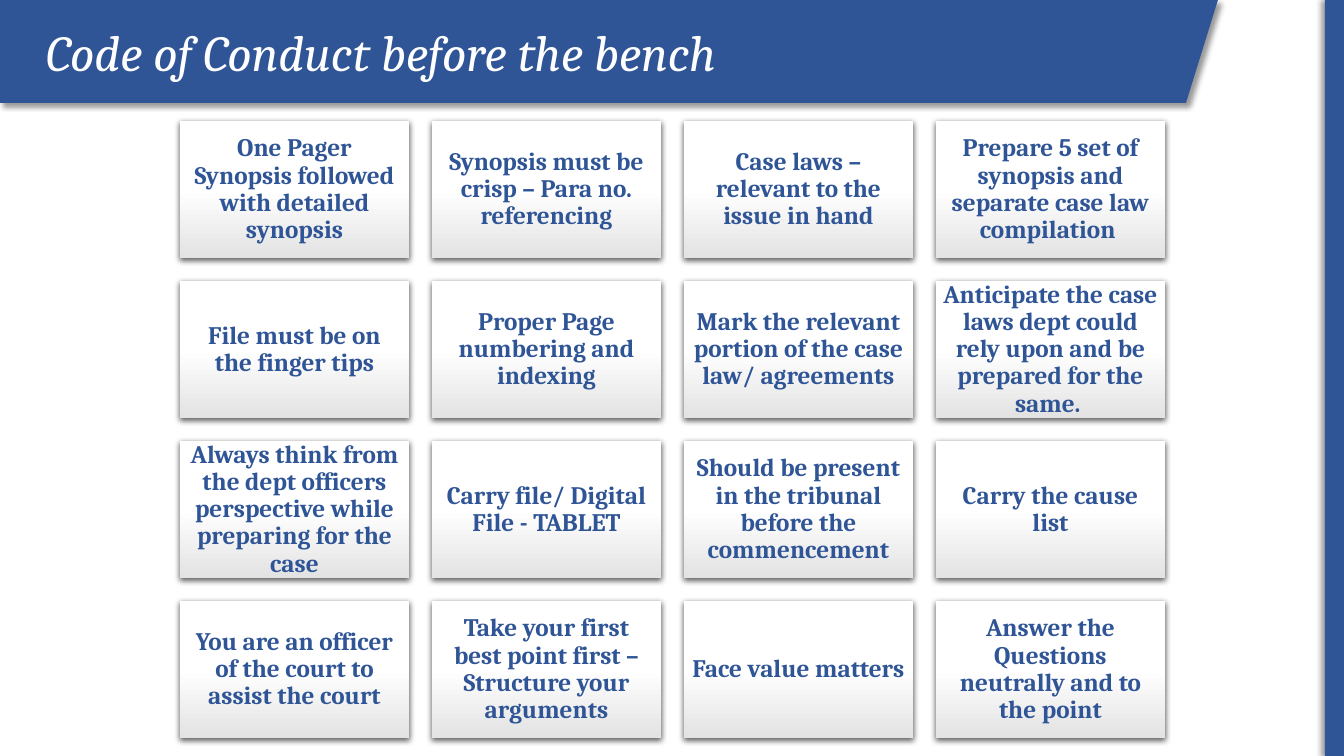
from pptx import Presentation
from pptx.dml.color import RGBColor
from pptx.enum.shapes import MSO_SHAPE as SHAPE
from pptx.enum.text import MSO_ANCHOR as ANCHOR, PP_ALIGN as ALIGN
from pptx.util import Pt
from lxml.etree import SubElement
from pptx.oxml.ns import qn

PX = 9144000 / 1008
BLUE, WHITE, GREY = "2F5597", "FFFFFF", "E3E3E3"
CARDS = [
    "One Pager Synopsis followed with detailed synopsis",
    "Synopsis must be crisp – Para no. referencing",
    "Case laws – relevant to the issue in hand",
    "Prepare 5 set of synopsis and separate case law compilation ",
    "File must be on the finger tips",
    "Proper Page numbering and indexing",
    "Mark the relevant portion of the case law/ agreements",
    "Anticipate the case laws dept could rely upon and be prepared for the same. ",
    "Always think from the dept officers perspective while preparing for the case",
    "Carry file/ Digital File - TABLET",
    "Should be present in the tribunal before the commencement",
    "Carry the cause list",
    "You are an officer of the court to assist the court",
    "Take your first best point first – Structure your arguments",
    "Face value matters",
    "Answer the Questions neutrally and to the point",
]


def box(*sizes):
    """Turn px lengths into EMU."""
    return [round(size * PX) for size in sizes]


def shade(shape, blur, dist, angle, alpha):
    """Drop the outline and cast a black shadow; blur and dist in points."""
    shape.line.fill.background()
    shape.shadow.inherit = False
    effects = shape._element.spPr.find(qn("a:effectLst"))
    outer = SubElement(effects, qn("a:outerShdw"), blurRad=str(Pt(blur)),
                       dist=str(Pt(dist)), dir=str(angle * 60000),
                       algn="ctr", rotWithShape="0")
    black = SubElement(outer, qn("a:srgbClr"), val="000000")
    SubElement(black, qn("a:alpha"), val=str(alpha * 1000))


deck = Presentation()
deck.slide_width, deck.slide_height = box(1344, 756)
slide = deck.slides.add_slide(deck.slide_layouts[6])
shapes = slide.shapes

# Title banner and side bar
pen = shapes.build_freeform(0, 0, scale=PX)
pen.add_line_segments([(1218, 0), (1186, 103), (0, 103)], close=True)
banner = pen.convert_to_shape()
bar = shapes.add_shape(SHAPE.RECTANGLE, *box(1325, 0, 19, 756))
for shape, angle in [(banner, 45), (bar, 180)]:
    shape.fill.solid()
    shape.fill.fore_color.rgb = RGBColor.from_string(BLUE)
    shade(shape, 4, 3, angle, 40)

title = shapes.add_textbox(*box(36, 16, 1154, 72)).text_frame
title.word_wrap = True
run = title.paragraphs[0].add_run()
run.text = "Code of Conduct before the bench"
run.font.name, run.font.size, run.font.italic = "Cambria", Pt(36), True
run.font.color.rgb = RGBColor.from_string(WHITE)

# Four by four grid of cards
for i, text in enumerate(CARDS):
    row, col = divmod(i, 4)
    card = shapes.add_shape(
        SHAPE.RECTANGLE, *box(180 + 252 * col, 121 + 160 * row, 229, 137))
    card.fill.gradient()
    card.fill.gradient_angle = 270
    for stop, (place, hue) in zip(card.fill.gradient_stops,
                                  [(0.5, WHITE), (1, GREY)]):
        stop.position = place
        stop.color.rgb = RGBColor.from_string(hue)
    shade(card, 4.5, 1.5, 90, 63)

    frame = card.text_frame
    frame.word_wrap = True
    frame.vertical_anchor = ANCHOR.MIDDLE
    for side in ("left", "top", "right", "bottom"):
        setattr(frame, f"margin_{side}", box(7)[0])
    para = frame.paragraphs[0]
    para.alignment, para.line_spacing = ALIGN.CENTER, 0.9
    run = para.add_run()
    run.text = text
    run.font.name, run.font.size, run.font.bold = "Cambria", Pt(18), True
    run.font.color.rgb = RGBColor.from_string(BLUE)

deck.save("out.pptx")
